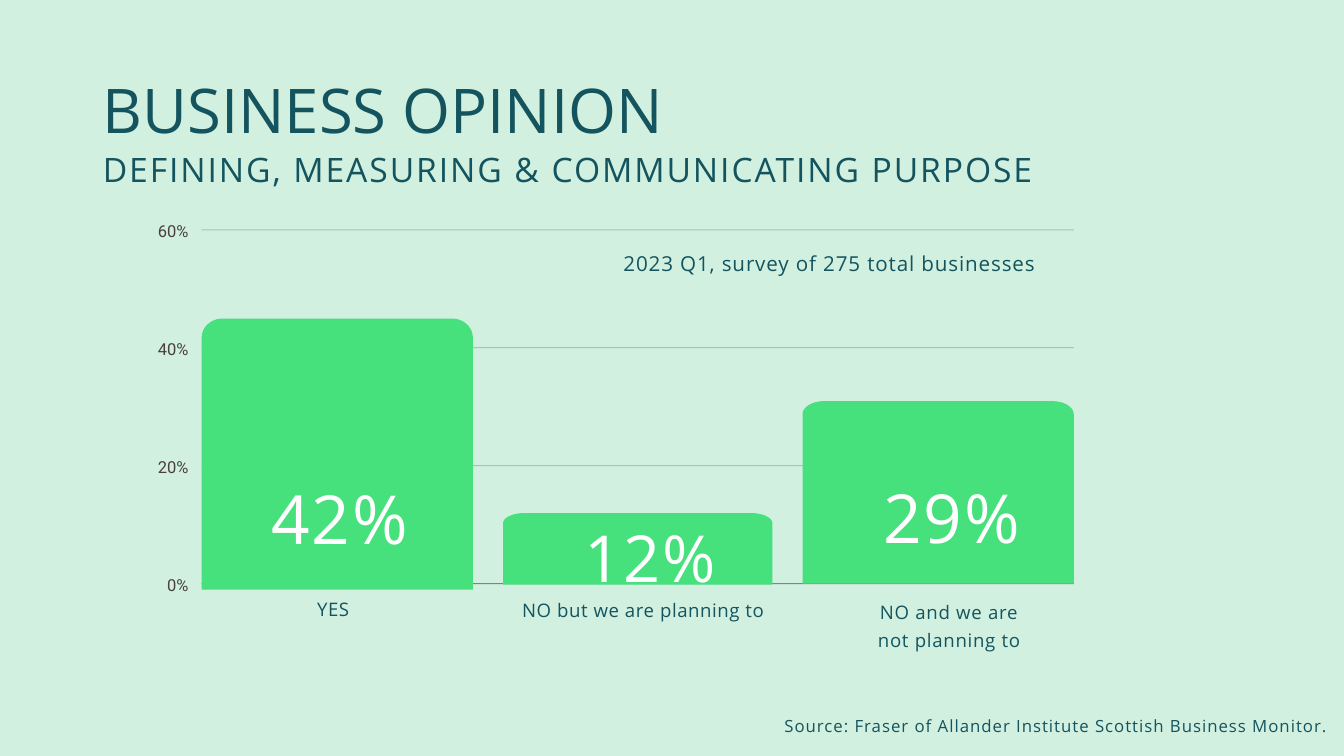
"""Builds the business opinion slide with its hand-drawn bar chart."""
import math

import lxml.etree
import pptx
import pptx.dml.color
import pptx.enum.text
import pptx.oxml.ns
import pptx.util

Inches = pptx.util.Inches
Pt = pptx.util.Pt
ALIGN = pptx.enum.text.PP_ALIGN

COLORS = {"background": "D1F0E0", "teal": "14545E", "green": "46E17D",
          "axis": "49403C", "white": "FFFFFF"}
TITLE = "BUSINESS OPINION"
TITLE_BOX = (0.92, 0.4, 11.5, 1.45)

AXIS_LABELS = ["60%", "40%", "20%", "0%"]
PLOT_LEFT, PLOT_RIGHT, PLOT_TOP, GRID_STEP = 2, 10.65, 2.28, 1.17

# left, top, right, bottom, corner height
BARS = [
    (2, 3.16, 4.69, 5.85, 0.19),
    (4.99, 5.09, 7.66, 5.8, 0.1),
    (7.96, 3.98, 10.65, 5.79, 0.13),
]
CORNER_WIDTH = 0.21

STYLES = {
    "title": {"size": 44, "color": "teal", "align": ALIGN.LEFT, "line": 0.9},
    "subtitle": {"size": 24, "color": "teal", "align": ALIGN.LEFT, "line": 0.9, "tracking": 140},
    "source": {"size": 12, "color": "teal", "align": ALIGN.LEFT, "line": Pt(28.3), "tracking": 70},
    "note": {"size": 14.7, "color": "teal", "line": Pt(22.3), "tracking": 60},
    "axis": {"size": 11.8, "color": "axis", "align": ALIGN.RIGHT, "line": Pt(16.5),
             "font": "Roboto"},
    "yes": {"size": 13.3, "color": "teal", "line": Pt(16.9), "tracking": 40},
    "planning": {"size": 13.3, "color": "teal", "line": Pt(17.7), "tracking": 40},
    "not planning": {"size": 13.3, "color": "teal", "line": Pt(19.7), "tracking": 50},
    "value": {"size": 48.3, "color": "white", "line": Pt(58.1), "tracking": 140},
    "small value": {"size": 46.3, "color": "white", "line": Pt(56), "tracking": 140},
}
TEXTS = [
    ("DEFINING, MEASURING & COMMUNICATING PURPOSE", "subtitle", (1.02, 1.52, 11.3, 0.5)),
    ("Source: Fraser of Allander Institute Scottish Business Monitor.", "source",
     (7.78, 6.91, 5.5, 0.34)),
    ("YES", "yes", (1.89, 5.92, 2.83, 0.23)),
    ("NO but we are planning to", "planning", (5.11, 5.92, 2.54, 0.49)),
    ("NO and we are not planning to", "not planning", (8.58, 5.91, 1.67, 0.54)),
    ("42%", "value", (2.12, 4.73, 2.5, 0.81)),
    ("12%", "small value", (5.2, 5.13, 2.5, 0.77)),
    ("29%", "value", (8.19, 4.72, 2.5, 0.81)),
    ("2023 Q1, survey of 275 total businesses", "note", (5.27, 2.42, 5.91, 0.29)),
]


def rgb(name):
    return pptx.dml.color.RGBColor.from_string(COLORS[name])


def write(frame, text, style_name):
    style = STYLES[style_name]
    paragraph = frame.paragraphs[0]
    run = paragraph.add_run()
    run.text = text
    paragraph_format = {"alignment": style.get("align", ALIGN.CENTER),
                        "line_spacing": style["line"], "space_before": Pt(0)}
    for name, value in paragraph_format.items():
        setattr(paragraph, name, value)
    font_format = {"name": style.get("font", "Open Sans"), "size": Pt(style["size"]),
                   "bold": False}
    for name, value in font_format.items():
        setattr(run.font, name, value)
    run.font.color.rgb = rgb(style["color"])
    if "tracking" in style:
        run._r.get_or_add_rPr().set("spc", str(style["tracking"]))


def add_text(slide, text, style_name, box):
    frame = slide.shapes.add_textbox(*map(Inches, box)).text_frame
    frame_format = {"word_wrap": True, "margin_left": 0, "margin_top": 0,
                    "margin_right": 0, "margin_bottom": 0}
    for name, value in frame_format.items():
        setattr(frame, name, value)
    write(frame, text, style_name)


def add_gridline(slide, y, opacity):
    line = slide.shapes.add_connector(
        pptx.enum.shapes.MSO_CONNECTOR.STRAIGHT,
        Inches(PLOT_LEFT), Inches(y), Inches(PLOT_RIGHT), Inches(y))
    line.line.width = Pt(0.75)
    line.line.color.rgb = rgb("axis")
    properties = line._element.spPr
    color = properties.find(".//" + pptx.oxml.ns.qn("a:srgbClr"))
    lxml.etree.SubElement(color, pptx.oxml.ns.qn("a:alpha")).set("val", str(opacity * 1000))
    lxml.etree.SubElement(properties, pptx.oxml.ns.qn("a:effectLst"))


def add_bar(slide, left, top, right, bottom, corner_height):
    angles = [math.radians(step * 7.5) for step in range(13)]
    arc = [(CORNER_WIDTH * (1 - math.cos(angle)), corner_height * (1 - math.sin(angle)))
           for angle in angles]
    points = [(left + x, top + y) for x, y in arc]
    points += [(right - x, top + y) for x, y in reversed(arc)]
    points.append((right, bottom))
    builder = slide.shapes.build_freeform(Inches(left), Inches(bottom))
    builder.add_line_segments([(Inches(x), Inches(y)) for x, y in points], close=True)
    bar = builder.convert_to_shape()
    bar.shadow.inherit = False
    bar.fill.solid()
    bar.fill.fore_color.rgb = rgb("green")
    bar.line.fill.background()


def main():
    presentation = pptx.Presentation()
    presentation.slide_width = Inches(13.33)
    presentation.slide_height = Inches(7.5)
    slide = presentation.slides.add_slide(presentation.slide_layouts[5])
    slide.background.fill.solid()
    slide.background.fill.fore_color.rgb = rgb("background")

    title = slide.shapes.title
    for name, value in zip(("left", "top", "width", "height"), TITLE_BOX):
        setattr(title, name, Inches(value))
    title.text_frame.vertical_anchor = pptx.enum.text.MSO_ANCHOR.MIDDLE
    write(title.text_frame, TITLE, "title")

    for index, label in enumerate(AXIS_LABELS):
        y = PLOT_TOP + index * GRID_STEP
        add_gridline(slide, y, 60 if label == "0%" else 25)
        add_text(slide, label, "axis", (1.37, y - 0.12, 0.5, 0.22))
    for bar in BARS:
        add_bar(slide, *bar)
    for text in TEXTS:
        add_text(slide, *text)
    presentation.save("out.pptx")


if __name__ == "__main__":
    main()
